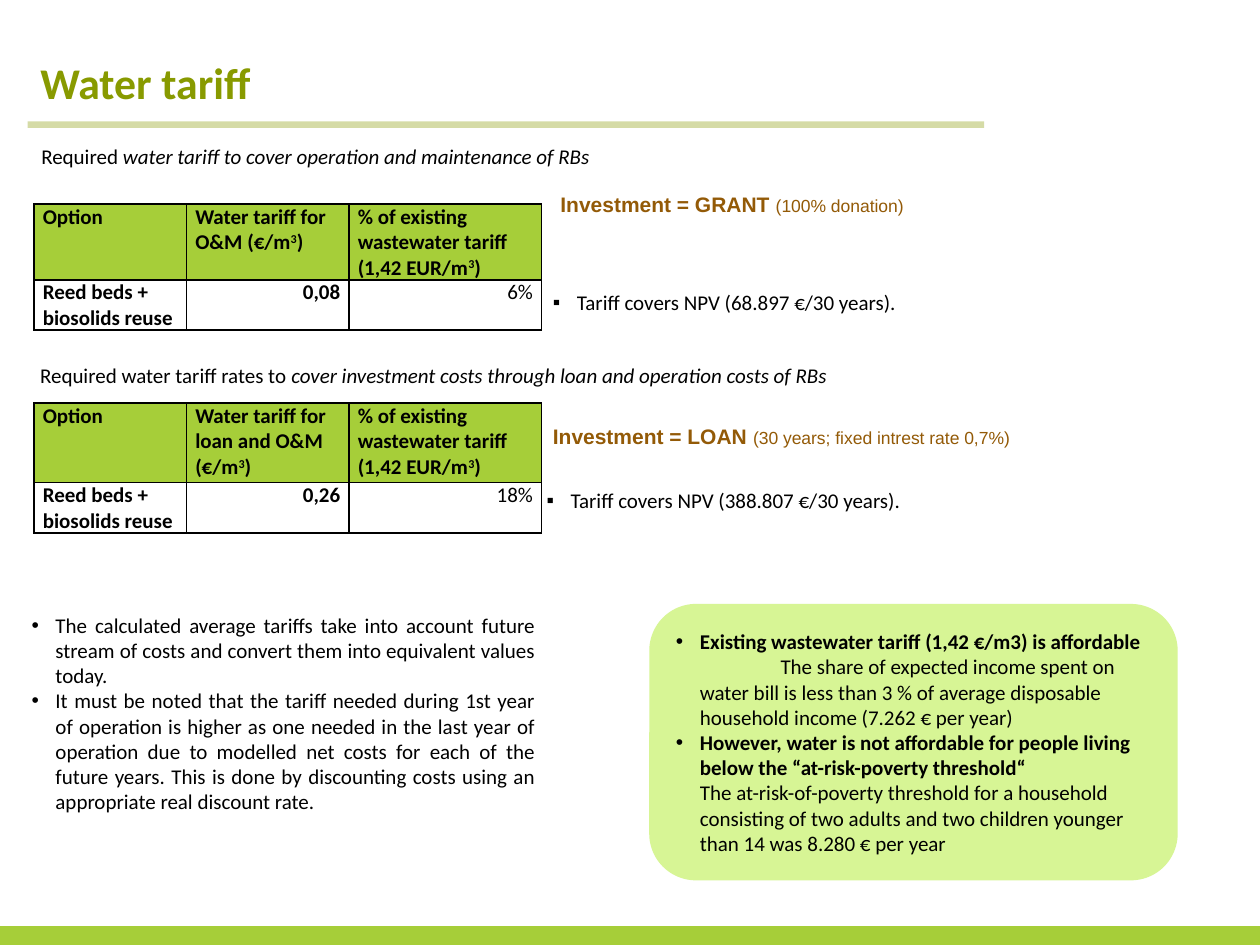
"""Build the water tariff slide with its two tariff tables and conclusions."""
import lxml.etree
import pptx
import pptx.dml.color
import pptx.enum.shapes
import pptx.enum.text
import pptx.oxml
import pptx.oxml.ns
import pptx.util

COLORS = {"olive": "889A00", "green": "A6CE39", "pale": "D7F595", "brown": "935A07", "black": "000000"}
RGB = {name: pptx.dml.color.RGBColor.from_string(value) for name, value in COLORS.items()}
ALIGN = pptx.enum.text.PP_ALIGN
qn = pptx.oxml.ns.qn

presentation = pptx.Presentation()
presentation.slide_width = pptx.util.Inches(10)
presentation.slide_height = pptx.util.Inches(7.5)
column = presentation.slide_width / 100
row = presentation.slide_height / 75
slide = presentation.slides.add_slide(presentation.slide_layouts[1])
shapes = slide.shapes


def place(left, top, width, height):
    """Turn grid columns and rows into slide lengths."""
    return [round(left * column), round(top * row), round(width * column), round(height * row)]


def write(paragraph, runs, color="black", font="Calibri", align=ALIGN.LEFT, bullet=None, tab=None):
    """Fill a paragraph with (text, style, size) runs; a None run is a line break."""
    paragraph.alignment = align
    paragraph.space_before = pptx.util.Pt(0)
    properties = paragraph._p.get_or_add_pPr()
    if bullet:
        indent = round(1.9 * column)
        properties.set("marL", str(indent))
        properties.set("indent", str(-indent))
        lxml.etree.SubElement(properties, qn("a:buFont"), typeface="Arial")
        lxml.etree.SubElement(properties, qn("a:buChar"), char=bullet)
    if tab:
        stops = lxml.etree.SubElement(properties, qn("a:tabLst"))
        lxml.etree.SubElement(stops, qn("a:tab"), pos=str(round(tab * column)), algn="l")
    for item in runs:
        if item is None:
            paragraph.add_line_break()
            continue
        text, style, size = item
        run = paragraph.add_run()
        run.text = text
        run.font.name = font
        run.font.size = pptx.util.Pt(size)
        run.font.bold = "b" in style
        run.font.italic = "i" in style
        run.font.color.rgb = RGB[color]
        if "^" in style:
            run._r.get_or_add_rPr().set("baseline", "30000")


footer = shapes.add_shape(pptx.enum.shapes.MSO_SHAPE.RECTANGLE, *place(0, 73.5, 100, 1.5))
callout = shapes.add_shape(pptx.enum.shapes.MSO_SHAPE.ROUNDED_RECTANGLE, *place(51.6, 48, 41.8, 21.8))
for shape, color in ((footer, "green"), (callout, "pale")):
    shape.shadow.inherit = False
    shape.fill.solid()
    shape.fill.fore_color.rgb = RGB[color]
    shape.line.color.rgb = RGB[color]
    shape.line.width = pptx.util.Pt(1)
footer.line.fill.background()

title = shapes.title
title.left, title.top, title.width, title.height = place(2.2, 6.3, 80.9, 3.3)
title.text_frame.auto_size = pptx.enum.text.MSO_AUTO_SIZE.NONE
title.text_frame.vertical_anchor = pptx.enum.text.MSO_ANCHOR.TOP
title_paragraph = title.text_frame.paragraphs[0]
title_paragraph.line_spacing = pptx.util.Pt(13)
write(title_paragraph, [("Water tariff", "b", 25)], "olive")

left, top, width, _ = place(2.2, 9.9, 75.9, 0)
rule = shapes.add_connector(pptx.enum.shapes.MSO_CONNECTOR.STRAIGHT, left, top, left + width, top)
rule.line.color.rgb = RGB["olive"]
rule.line.width = pptx.util.Pt(3.75)
rule_color = rule._element.spPr.find(".//" + qn("a:srgbClr"))
lxml.etree.SubElement(rule_color, qn("a:alpha"), val="35000")
lxml.etree.SubElement(rule._element.spPr, qn("a:effectLst"))

labels = [
    (place(2.3, 10.9, 76.3, 3), {}, [
        ("Required ", "", 12), ("water tariff to cover operation and maintenance of RBs", "i", 12)]),
    (place(2.2, 28.3, 87.6, 3), {}, [
        ("Required water tariff rates to ", "", 12),
        ("cover investment costs through loan and operation costs of RBs", "i", 12)]),
    (place(42.9, 22.5, 56, 3), {"bullet": "▪"}, [("Tariff covers NPV (68.897 €/30 years).", "", 12)]),
    (place(42.4, 38.2, 56, 3), {"bullet": "▪"}, [("Tariff covers NPV (388.807 €/30 years).", "", 12)]),
    (place(43.5, 14.7, 45, 3), {"color": "brown", "font": "Arial"}, [
        ("Investment = GRANT ", "b", 12), ("(100% donation)", "", 10)]),
    (place(42.9, 33.1, 45, 3), {"color": "brown", "font": "Arial"}, [
        ("Investment = LOAN ", "b", 12), ("(30 years; fixed intrest rate 0,7%)", "", 10)]),
]
for position, options, runs in labels:
    frame = shapes.add_textbox(*position).text_frame
    frame.word_wrap = True
    write(frame.paragraphs[0], runs, **options)

tables = [(16.2, 6, "Water tariff for O&M (€/m", "0,08", "6%"),
          (32, 6.3, "Water tariff for loan and O&M (€/m", "0,26", "18%")]
cubed = [("3", "b^", 12), (")", "b", 12)]
for top, header_height, heading, tariff, share in tables:
    table = shapes.add_table(2, 3, *place(2.7, top, 40.3, header_height + 4)).table
    table.horz_banding = False
    for table_column, width in zip(table.columns, (12.1, 12.9, 15.3)):
        table_column.width = round(width * column)
    for table_row, height in zip(table.rows, (header_height, 4)):
        table_row.height = round(height * row)
    contents = [
        [[[("Option", "b", 12)]],
         [[(heading, "b", 12)] + cubed],
         [[("% of existing wastewater tariff (1,42 EUR/m", "b", 12)] + cubed]],
        [[[("Reed beds +", "b", 12)], [("biosolids reuse", "b", 12)]],
         [[(tariff, "b", 12)]],
         [[(share, "", 12)]]],
    ]
    for row_index, cells in enumerate(contents):
        for column_index, paragraphs in enumerate(cells):
            cell = table.cell(row_index, column_index)
            cell.margin_left = cell.margin_right = round(0.7 * column)
            cell.margin_top = cell.margin_bottom = 0
            for side in ("lnL", "lnR", "lnT", "lnB"):
                border = lxml.etree.SubElement(cell._tc.get_or_add_tcPr(), qn("a:" + side), w="12700")
                fill = lxml.etree.SubElement(border, qn("a:solidFill"))
                lxml.etree.SubElement(fill, qn("a:srgbClr"), val=COLORS["black"])
            if row_index == 0:
                cell.fill.solid()
                cell.fill.fore_color.rgb = RGB["green"]
            else:
                cell.fill.background()
            align = ALIGN.RIGHT if row_index and column_index else ALIGN.LEFT
            for index, runs in enumerate(paragraphs):
                paragraph = cell.text_frame.add_paragraph() if index else cell.text_frame.paragraphs[0]
                write(paragraph, runs, align=align)

notes = shapes.placeholders[1]
notes.left, notes.top, notes.width, notes.height = place(1.5, 48.1, 42, 17.2)
notes.text_frame.auto_size = pptx.enum.text.MSO_AUTO_SIZE.NONE
callout.text_frame.word_wrap = True
callout.text_frame.vertical_anchor = pptx.enum.text.MSO_ANCHOR.MIDDLE
lists = [
    (notes, ALIGN.JUSTIFY, None, [
        [("The calculated average tariffs take into account future stream of costs and convert them "
          "into equivalent values today.", "", 12)],
        [("It must be noted that the tariff needed during 1st year of operation is higher as one needed "
          "in the last year of operation due to modelled net costs for each of the future years. This is "
          "done by discounting costs using an appropriate real discount rate.", "", 12)]]),
    (callout, ALIGN.LEFT, 8.3, [
        [("Existing wastewater tariff (1,42 €/m3) is affordable", "b", 12), None,
         ("\tThe share of expected income spent on water bill is less than 3 % of average disposable "
          "household income (7.262 € per year)", "", 12)],
        [("However, water is not affordable for people living below the “at-risk-poverty threshold“", "b", 12),
         None,
         ("The at-risk-of-poverty threshold for a household consisting of two adults and two children "
          "younger than 14 was 8.280 € per year", "", 12)]]),
]
for shape, align, tab, items in lists:
    for index, runs in enumerate(items):
        paragraph = shape.text_frame.add_paragraph() if index else shape.text_frame.paragraphs[0]
        write(paragraph, runs, align=align, bullet="•", tab=tab)

presentation.save("out.pptx")
